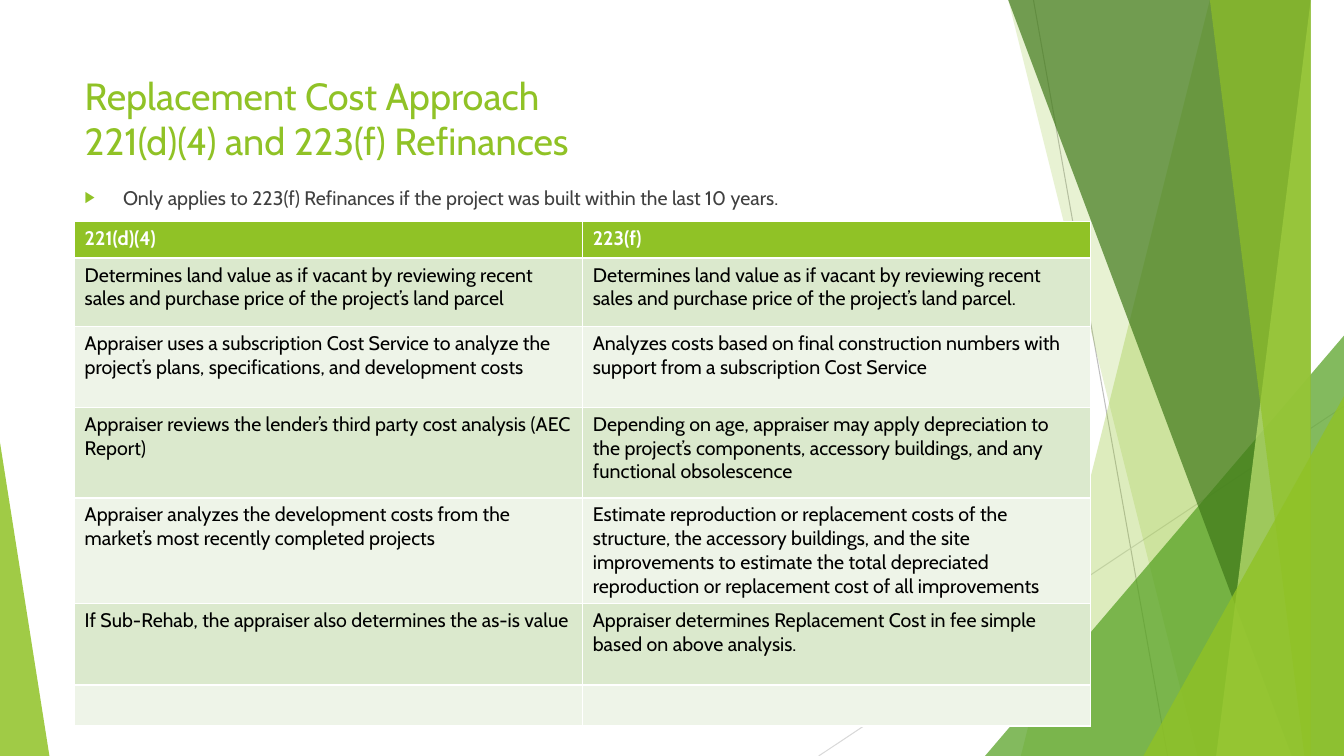
import pptx
import pptx.util
import pptx.dml.color
import pptx.enum.dml
import pptx.enum.shapes
import pptx.enum.text
import pptx.oxml
import pptx.oxml.ns
import lxml.etree

Inches = pptx.util.Inches
RGBColor = pptx.dml.color.RGBColor
LIME = RGBColor(0x90, 0xC2, 0x26)
GREEN = RGBColor(0x54, 0xA0, 0x21)
FOREST = RGBColor(0x3F, 0x78, 0x19)
PALE = RGBColor(0xC0, 0xE4, 0x74)
WHITE = RGBColor(0xFF, 0xFF, 0xFF)
BLACK = RGBColor(0, 0, 0)
DARK = RGBColor(0x40, 0x40, 0x40)
BANDS = [RGBColor(0xEE, 0xF4, 0xE8), RGBColor(0xDB, 0xE9, 0xCD)]
GRAYS = [RGBColor(0xBF, 0xBF, 0xBF), RGBColor(0xD9, 0xD9, 0xD9)]
W, H = 13.33, 7.5
LEFT = 0.74
qn = pptx.oxml.ns.qn


def write(p, text, size=14, color=BLACK, bold=False):
    for i, line in enumerate(text.split("\n")):
        if i:
            p.add_line_break()
        r = p.add_run()
        r.text = line
        r.font.name = "Cabin"
        r.font.size = pptx.util.Pt(size)
        r.font.bold = bold
        r.font.color.rgb = color


def paint(sp, color, opacity):
    sp.shadow.inherit = False
    sp.fill.solid()
    sp.fill.fore_color.rgb = color
    sp.line.fill.background()
    clr = sp.fill._xPr.find(qn("a:solidFill"))[0]
    lxml.etree.SubElement(clr, qn("a:alpha"), val=str(opacity * 1000))


prs = pptx.Presentation()
prs.slide_width, prs.slide_height = Inches(W), Inches(H)
s = prs.slides.add_slide(prs.slide_layouts[1])

ends = [(10.25, 0, 11.58, H), (W, 4.03, 8.12, H)]
for (x1, y1, x2, y2), gray in zip(ends, GRAYS):
    ln = s.shapes.add_connector(
        pptx.enum.shapes.MSO_CONNECTOR.STRAIGHT,
        Inches(x1), Inches(y1), Inches(x2), Inches(y2))
    ln.line.color.rgb = gray
    ln.line.width = pptx.util.Pt(0.75)
    lxml.etree.SubElement(ln._element.spPr, qn("a:effectLst"))

facets = [
    ("band", 12.28, 10.04, LIME, 30),
    ("band", 10.5, 11.83, LIME, 20),
    ("triangle", (9.77, 3.33, 3.56, 4.17), 1, GREEN, 72),
    ("band", 10.21, 12.91, FOREST, 70),
    ("band", 13.03, 11.92, PALE, 70),
    ("band", 11.96, 13.18, LIME, 65),
    ("triangle", (11.34, 3.93, 1.99, 3.57), 1, LIME, 80),
    ("triangle", (0, 4.39, 0.49, 3.11), 0, LIME, 85),
]
for kind, a, b, color, opacity in facets:
    if kind == "band":
        fb = s.shapes.build_freeform(a, -0.01, scale=Inches(1))
        fb.add_line_segments([(W, -0.01), (W, H), (b, H)], close=True)
        sp = fb.convert_to_shape()
    else:
        sp = s.shapes.add_shape(
            pptx.enum.shapes.MSO_SHAPE.ISOSCELES_TRIANGLE, *map(Inches, a))
        sp.adjustments[0] = b
    paint(sp, color, opacity)

title, body = s.placeholders
for sp, top, height in [(title, 0.67, 1.14), (body, 1.79, 0.34)]:
    sp.left, sp.top = Inches(LEFT), Inches(top)
    sp.width, sp.height = Inches(9.4), Inches(height)
    tf = sp.text_frame
    tf.word_wrap = True
    tf.auto_size = pptx.enum.text.MSO_AUTO_SIZE.NONE
    tf.vertical_anchor = pptx.enum.text.MSO_ANCHOR.TOP
    tf.paragraphs[0].alignment = pptx.enum.text.PP_ALIGN.LEFT

write(title.text_frame.paragraphs[0],
      "Replacement Cost Approach \n221(d)(4) and 223(f) Refinances",
      size=27, color=LIME)

p = body.text_frame.paragraphs[0]
write(p, "Only applies to 223(f) Refinances if the project was built within the last 10 years.",
      color=DARK)
p.space_before = pptx.util.Pt(10)
pPr = p._p.get_or_add_pPr()
pPr.set("marL", str(Inches(0.38)))
pPr.set("indent", str(-Inches(0.38)))
buClr = lxml.etree.SubElement(pPr, qn("a:buClr"))
lxml.etree.SubElement(buClr, qn("a:srgbClr"), val=str(LIME))
lxml.etree.SubElement(pPr, qn("a:buSzPct"), val="80000")
lxml.etree.SubElement(pPr, qn("a:buFont"), typeface="Arial")
lxml.etree.SubElement(pPr, qn("a:buChar"), char="▶")

rows = [
    (0.36, "221(d)(4)", "223(f)"),
    (0.68,
     "Determines land value as if vacant by reviewing recent sales and purchase price of the project’s land parcel",
     "Determines land value as if vacant by reviewing recent sales and purchase price of the project’s land parcel."),
    (0.8,
     "Appraiser uses a subscription Cost Service to analyze the project’s plans, specifications, and development costs",
     "Analyzes costs based on final construction numbers with support from a subscription Cost Service"),
    (0.9,
     "Appraiser reviews the lender’s third party cost analysis (AEC Report)",
     "Depending on age, appraiser may apply depreciation to the project’s components, accessory buildings, and any functional obsolescence"),
    (1.04,
     "Appraiser analyzes the development costs from the market’s most recently completed projects",
     "Estimate reproduction or replacement costs of the structure, the accessory buildings, and the site improvements to estimate the total depreciated reproduction or replacement cost of all improvements"),
    (0.81,
     "If Sub-Rehab, the appraiser also determines the as-is value",
     "Appraiser determines Replacement Cost in fee simple based on above analysis."),
    (0.36, "", ""),
]
table = s.shapes.add_table(
    len(rows), 2, Inches(LEFT), Inches(2.2), Inches(10.08),
    Inches(sum(row[0] for row in rows))).table
for i, (height, *texts) in enumerate(rows):
    table.rows[i].height = Inches(height)
    for j, text in enumerate(texts):
        cell = table.cell(i, j)
        cell.fill.solid()
        cell.fill.fore_color.rgb = BANDS[i % 2] if i else LIME
        if text:
            write(cell.text_frame.paragraphs[0], text,
                  color=BLACK if i else WHITE, bold=i == 0)

prs.save("out.pptx")
